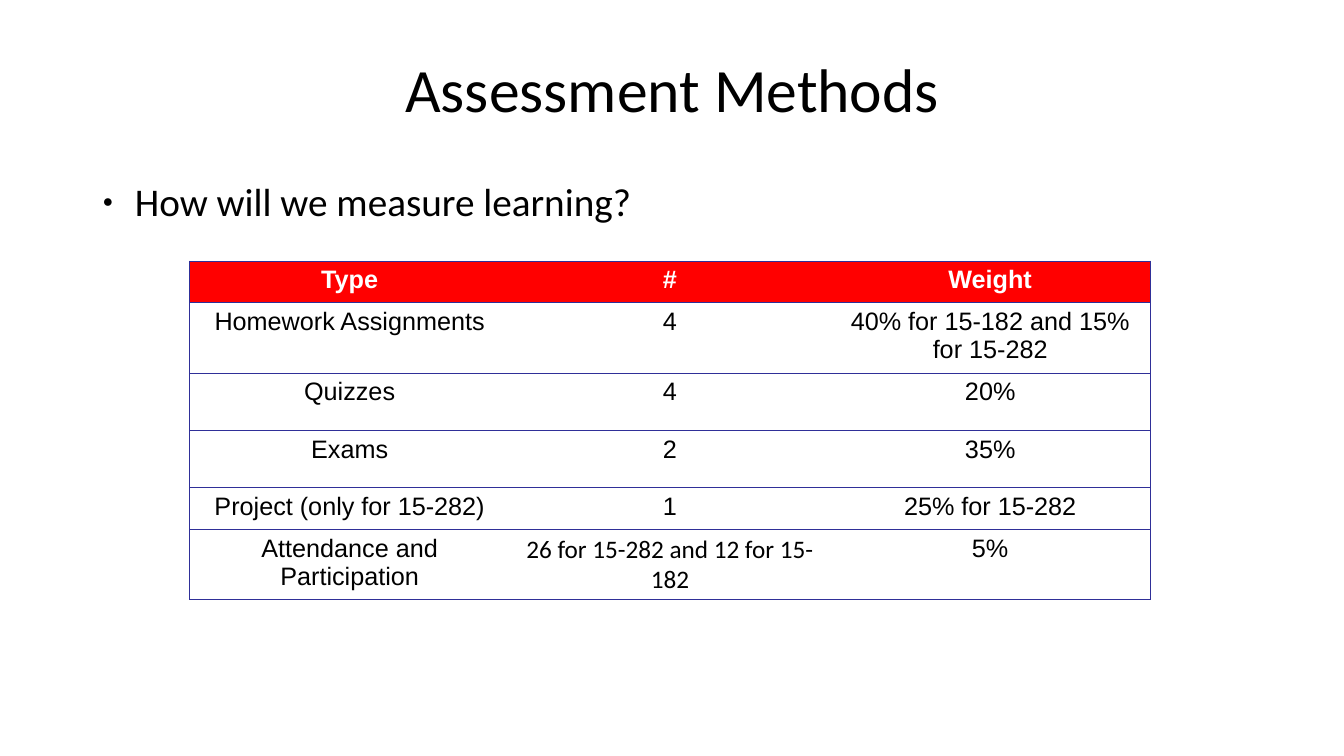
from lxml.etree import SubElement
from pptx import Presentation
from pptx.dml.color import RGBColor
from pptx.enum.text import MSO_ANCHOR, PP_ALIGN
from pptx.oxml.ns import qn
from pptx.util import Inches, Pt


def color(value):
    return RGBColor.from_string(value)


class AssessmentSlide:
    black, white, red, navy = "000000", "FFFFFF", "FF0000", "2F2F98"

    def __init__(self, deck):
        self.page = deck.slides.add_slide(deck.slide_layouts[6])

    def apply(self, target, formats):
        for name, value in formats.items():
            setattr(target, name, value)

    def paragraph(self, frame, text, font, ink, **paragraph_formats):
        para = frame.paragraphs[0]
        self.apply(para, paragraph_formats)
        span = para.add_run()
        span.text = text
        self.apply(span.font, font)
        span.font.color.rgb = color(ink)
        return para

    def text_box(self, place, text, size, anchor, **paragraph_formats):
        box = self.page.shapes.add_textbox(*map(Inches, place))
        self.apply(box.text_frame, {"word_wrap": True, "vertical_anchor": anchor})
        font = {"name": "Calibri", "size": Pt(size)}
        return self.paragraph(box.text_frame, text, font, self.black,
                              line_spacing=0.9, **paragraph_formats)

    def bullet(self, para, indent, hanging, percent):
        properties = para._p.get_or_add_pPr()
        properties.set("marL", str(Inches(indent)))
        properties.set("indent", str(-Inches(hanging)))
        for tag, name, value in (("a:buSzPct", "val", str(percent * 1000)),
                                 ("a:buFont", "typeface", "Arial"),
                                 ("a:buChar", "char", "●")):
            SubElement(properties, qn(tag)).set(name, value)

    def borders(self, cell, visible):
        properties = cell._tc.get_or_add_tcPr()
        for index, side in enumerate("LRTB"):
            line = SubElement(properties, qn(f"a:ln{side}"), w=str(Pt(0.75)))
            properties.insert(index, line)
            if side in visible:
                fill = SubElement(line, qn("a:solidFill"))
                SubElement(fill, qn("a:srgbClr"), val=self.navy)
            else:
                SubElement(line, qn("a:noFill"))

    def cell(self, cell, text, header, visible, font_name):
        if header:
            cell.fill.solid()
            cell.fill.fore_color.rgb = color(self.red)
        else:
            cell.fill.background()
        self.borders(cell, visible)
        font = {"name": font_name, "size": Pt(18), "bold": header}
        ink = self.white if header else self.black
        self.paragraph(cell.text_frame, text, font, ink, alignment=PP_ALIGN.CENTER)

    def table(self, place, rows, heights, fonts):
        columns = len(rows[0])
        frame = self.page.shapes.add_table(len(rows), columns, *map(Inches, place))
        table = frame.table
        self.apply(table, {"first_row": False, "horz_banding": False})
        for row, height in zip(table.rows, heights):
            row.height = Inches(height)
        for r, texts in enumerate(rows):
            for c, text in enumerate(texts):
                visible = "TB" + "L" * (c == 0) + "R" * (c == columns - 1)
                self.cell(table.cell(r, c), text, r == 0, visible,
                          fonts.get((r, c), "Arial"))
        return table


def main():
    deck = Presentation()
    deck.slide_width, deck.slide_height = Inches(13.33), Inches(7.5)
    slide = AssessmentSlide(deck)
    slide.text_box((2.17, 0.34, 9, 1.16), "Assessment Methods", 44,
                   MSO_ANCHOR.MIDDLE, alignment=PP_ALIGN.CENTER)
    question = slide.text_box((0.81, 1.76, 10.38, 4.95), "How will we measure learning?",
                              28, MSO_ANCHOR.TOP, space_before=Pt(10))
    slide.bullet(question, 0.43, 0.32, 45)
    rows = [
        ("Type", "#", "Weight"),
        ("Homework Assignments", "4", "40% for 15-182 and 15% for 15-282"),
        ("Quizzes", "4", "20%"),
        ("Exams", "2", "35%"),
        ("Project (only for 15-282)", "1", "25% for 15-282"),
        ("Attendance and Participation", "26 for 15-282 and 12 for 15-182", "5%"),
    ]
    attendance = (5, 1)
    table = slide.table((1.88, 2.59, 9.53, 3.35), rows,
                        (0.41, 0.41, 0.57, 0.57, 0.41, 0.57), {attendance: "Calibri"})
    table.cell(*attendance).vertical_anchor = MSO_ANCHOR.MIDDLE
    deck.save("out.pptx")


if __name__ == "__main__":
    main()
